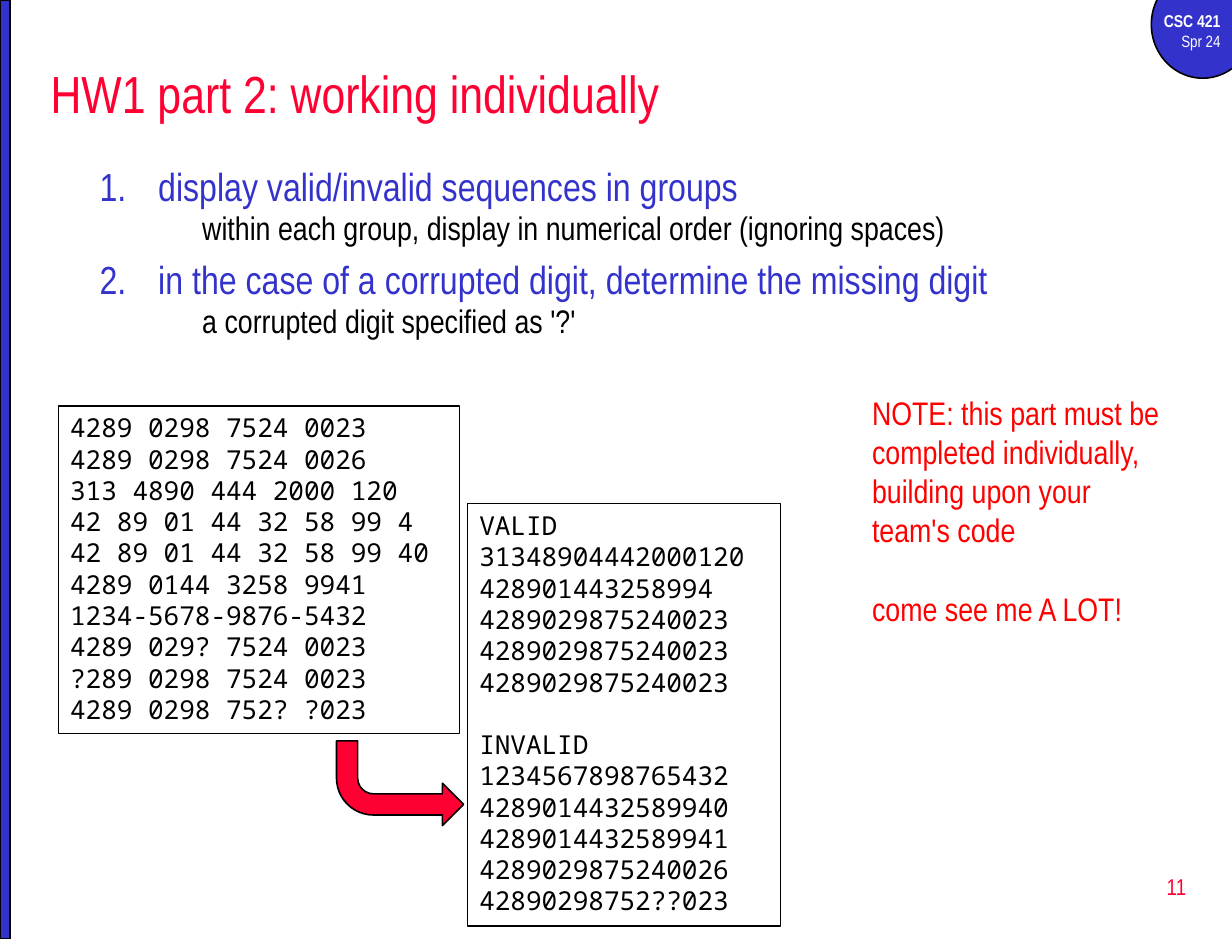
from dataclasses import dataclass

from lxml.etree import SubElement
from pptx import Presentation
from pptx.dml.color import RGBColor
from pptx.enum.shapes import MSO_SHAPE
from pptx.enum.text import MSO_ANCHOR, PP_ALIGN
from pptx.oxml.ns import qn
from pptx.util import Pt


@dataclass(frozen=True)
class Theme:
    blue: RGBColor = RGBColor(0x33, 0x33, 0xCC)
    crimson: RGBColor = RGBColor(0xFF, 0x00, 0x33)
    red: RGBColor = RGBColor(0xFF, 0x00, 0x00)
    black: RGBColor = RGBColor(0x00, 0x00, 0x00)
    white: RGBColor = RGBColor(0xFF, 0xFF, 0xFF)
    prose: str = "Arial Narrow"
    code: str = "Noto Sans Mono"
    title_size: float = 32
    task_size: float = 24
    detail_size: float = 20
    code_size: float = 16
    number_size: float = 14
    course_size: float = 10.5
    term_size: float = 10


THEME = Theme()

TASKS = [
    ("display valid/invalid sequences in groups",
     "within each group, display in numerical order (ignoring spaces)"),
    ("in the case of a corrupted digit, determine the missing digit",
     "a corrupted digit specified as '?'"),
]
CARD_NUMBERS = [
    "4289 0298 7524 0023",
    "4289 0298 7524 0026",
    "313 4890 444 2000 120",
    "42 89 01 44 32 58 99 4",
    "42 89 01 44 32 58 99 40",
    "4289 0144 3258 9941",
    "1234-5678-9876-5432",
    "4289 029? 7524 0023",
    "?289 0298 7524 0023",
    "4289 0298 752? ?023",
]
VALID = [
    "VALID",
    "31348904442000120",
    "428901443258994",
    "4289029875240023",
    "4289029875240023",
    "4289029875240023",
]
INVALID = [
    "INVALID",
    "1234567898765432",
    "4289014432589940",
    "4289014432589941",
    "4289029875240026",
    "42890298752??023",
]
NOTE = [
    "NOTE: this part must be completed individually, building upon your team's code",
    "come see me A LOT!",
]


def apply_format(target, values):
    for name, value in values.items():
        setattr(target, name, value)


def place(bounds):
    return [Pt(length) for length in bounds]


def add_frame(slide, bounds, **frame_format):
    box = slide.shapes.add_textbox(*place(bounds))
    apply_format(box.text_frame, {"word_wrap": True, **frame_format})
    return box


def add_line(frame, text, size, color, font=THEME.prose, bold=False, **paragraph_format):
    first = frame.paragraphs[0]
    paragraph = first if not first.runs else frame.add_paragraph()
    apply_format(paragraph, paragraph_format)
    run = paragraph.add_run()
    run.text = text
    apply_format(run.font, {"name": font, "size": Pt(size), "bold": bold})
    run.font.color.rgb = color
    return paragraph


def add_solid(slide, preset, bounds, color):
    solid = slide.shapes.add_shape(preset, *place(bounds))
    solid.shadow.inherit = False
    solid.fill.solid()
    solid.fill.fore_color.rgb = color
    solid.line.color.rgb = THEME.black
    solid.line.width = Pt(1)
    return solid


def indent(paragraph, margin, hanging=0, numbered=False):
    properties = paragraph._p.get_or_add_pPr()
    properties.set("marL", str(Pt(margin)))
    properties.set("indent", str(Pt(-hanging)))
    if numbered:
        SubElement(properties, qn("a:buFont"), typeface="+mj-lt")
        SubElement(properties, qn("a:buAutoNum"), type="arabicPeriod")
    else:
        SubElement(properties, qn("a:buNone"))


def add_tasks(slide, bounds):
    frame = add_frame(slide, bounds).text_frame
    for task, detail in TASKS:
        heading = add_line(frame, task, THEME.task_size, THEME.blue, space_before=Pt(5))
        indent(heading, 36, 36, numbered=True)
        explanation = add_line(frame, detail, THEME.detail_size, THEME.black,
                               level=1, line_spacing=0.8, space_before=Pt(4))
        indent(explanation, 63)


def add_listing(slide, bounds, *groups):
    listing = add_frame(slide, bounds)
    listing.line.color.rgb = THEME.black
    listing.line.width = Pt(0.75)
    for group_index, group in enumerate(groups):
        for line_index, text in enumerate(group):
            starts_group = group_index > 0 and line_index == 0
            add_line(listing.text_frame, text, THEME.code_size, THEME.black, THEME.code,
                     space_before=Pt(19.2 if starts_group else 0))


def add_course_badge(slide):
    add_solid(slide, MSO_SHAPE.OVAL, (706.5, -18, 63, 66), THEME.blue)
    badge = add_frame(slide, (696, 3, 60, 33)).text_frame
    add_line(badge, "CSC 421", THEME.course_size, THEME.white, bold=True,
             alignment=PP_ALIGN.RIGHT)
    add_line(badge, "Spr 24", THEME.term_size, THEME.white, alignment=PP_ALIGN.RIGHT)


def add_note(slide, bounds):
    frame = add_frame(slide, bounds).text_frame
    for index, text in enumerate(NOTE):
        add_line(frame, text, THEME.detail_size, THEME.red, space_before=Pt(24 * index))


def main():
    deck = Presentation()
    apply_format(deck, {"slide_width": Pt(756), "slide_height": Pt(576)})
    slide = deck.slides.add_slide(deck.slide_layouts[6])

    add_course_badge(slide)
    add_solid(slide, MSO_SHAPE.RECTANGLE, (0, 0, 6, 576), THEME.blue)

    title = add_frame(slide, (24, 30, 714, 54), vertical_anchor=MSO_ANCHOR.MIDDLE)
    add_line(title.text_frame, "HW1 part 2: working individually",
             THEME.title_size, THEME.crimson)
    add_tasks(slide, (54, 96, 685.5, 126))

    page = add_frame(slide, (577.5, 525, 157.5, 38), vertical_anchor=MSO_ANCHOR.MIDDLE)
    add_line(page.text_frame, "11", THEME.number_size, THEME.crimson,
             alignment=PP_ALIGN.RIGHT)

    add_note(slide, (528, 237.5, 192, 152.5))
    flow = add_solid(slide, MSO_SHAPE.BENT_ARROW, (206.5, 454.5, 78, 52), THEME.crimson)
    flow._element.spPr.xfrm.set("flipV", "1")
    add_listing(slide, (36, 249, 246, 201), CARD_NUMBERS)
    add_listing(slide, (287, 309, 192, 259), VALID, INVALID)

    deck.save("out.pptx")


if __name__ == "__main__":
    main()
